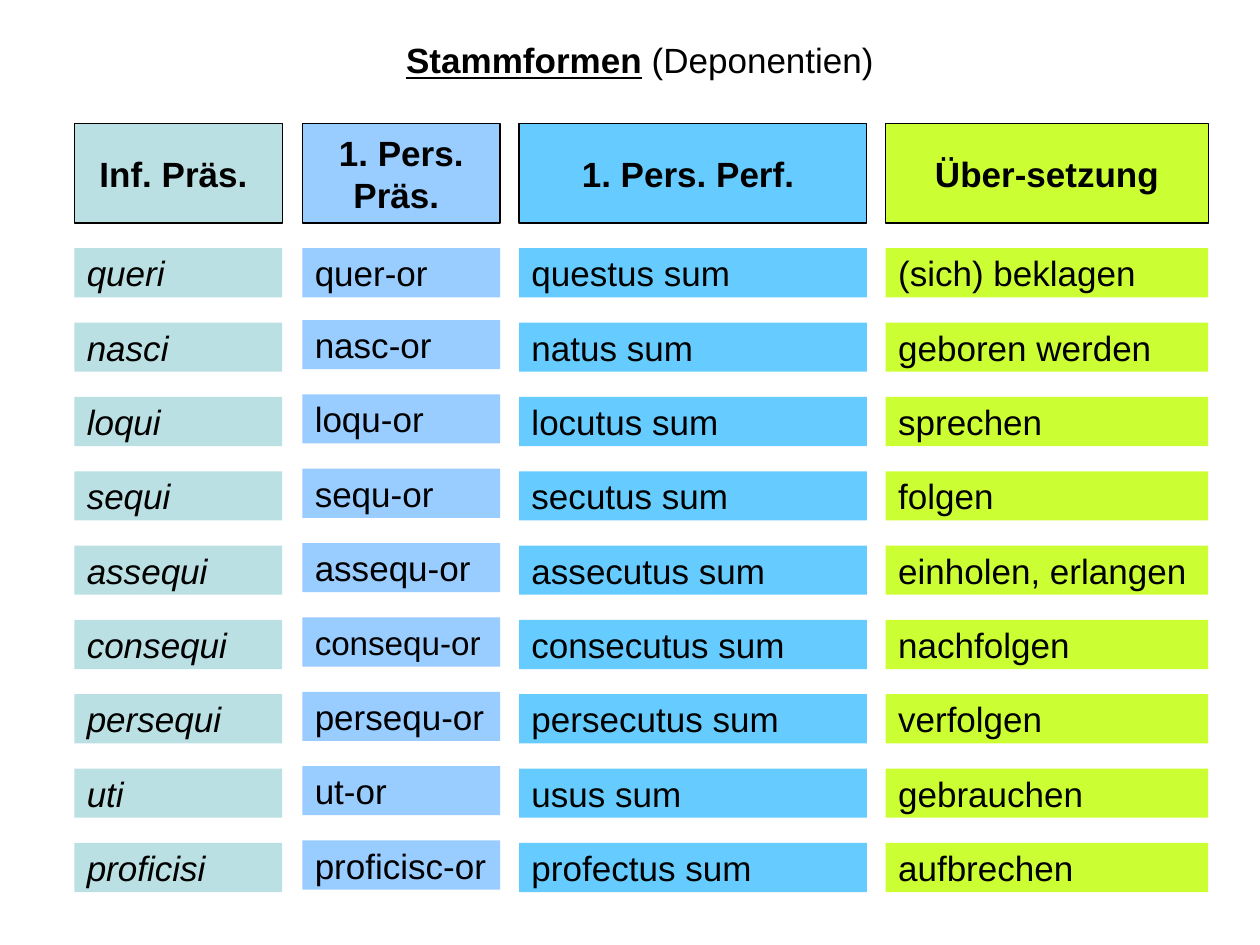
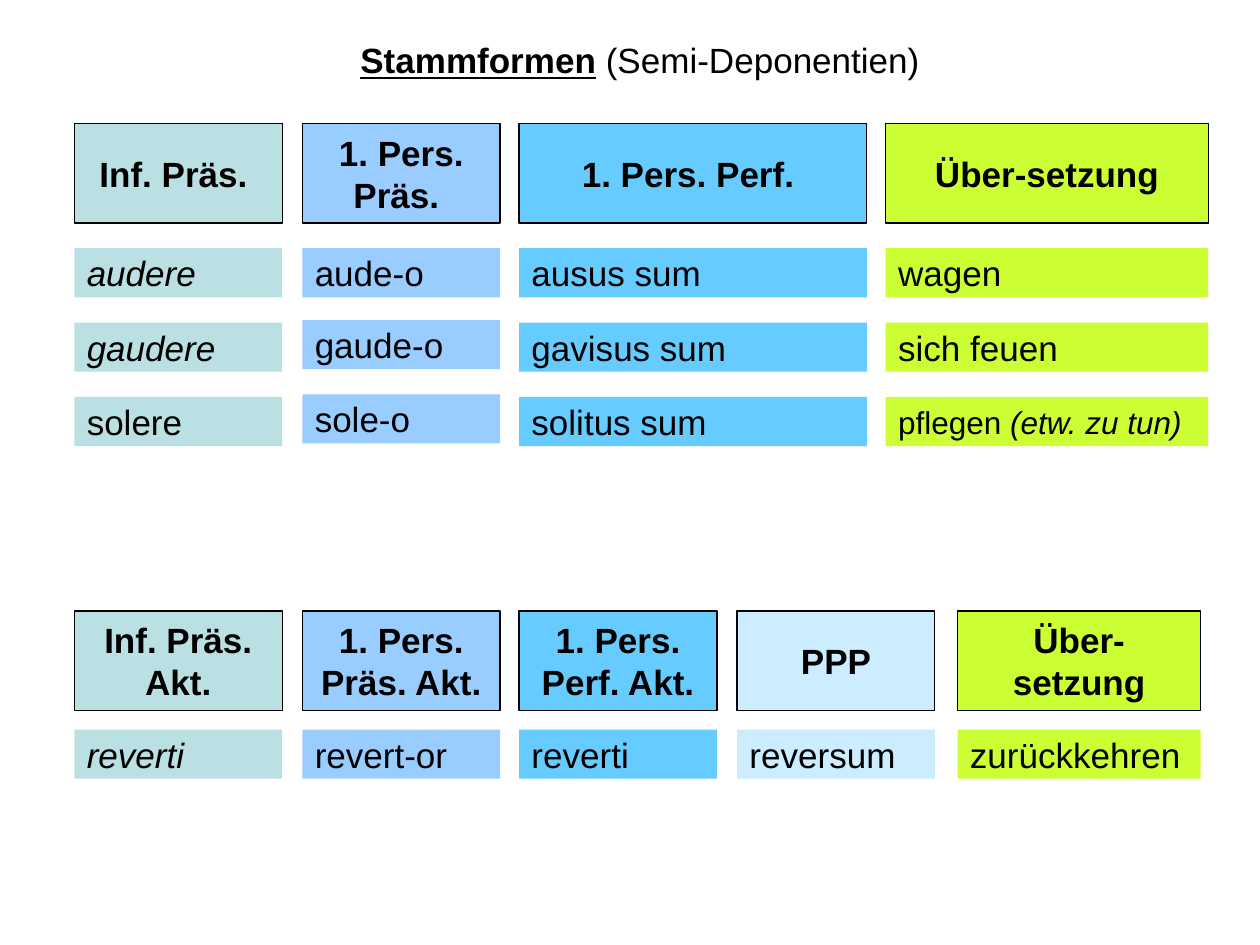
from dataclasses import dataclass

from pptx import Presentation
from pptx.dml.color import RGBColor
from pptx.enum.shapes import MSO_SHAPE
from pptx.enum.text import MSO_ANCHOR, PP_ALIGN
from pptx.util import Inches, Pt

COLORS = {
    "text": "000000",
    "infinitive": "BBE0E3",
    "present": "99CCFF",
    "perfect": "66CCFF",
    "participle": "CCECFF",
    "translation": "CCFF33",
}
FONT = "Arial"
SIZE = 20
HEADER_HEIGHT = 0.79
ROW_HEIGHT = 0.39
ROW_STEP = 0.59


@dataclass
class Column:
    color: str
    left: float
    width: float
    header: str
    italic: bool = False
    lift: float = 0


@dataclass
class Entry:
    text: str
    size: int = SIZE
    upright: bool = False
    note: str = ""


def rgb(name):
    return RGBColor.from_string(COLORS[name])


class Deck:
    def __init__(self):
        self.prs = Presentation()
        self.prs.slide_width = Inches(10)
        self.prs.slide_height = Inches(7.5)
        self.s = None

    def add_slide(self, subject):
        self.s = self.prs.slides.add_slide(self.prs.slide_layouts[6])
        self.title(subject)

    def style(self, p, size=SIZE, bold=False, italic=False):
        p.font.name = FONT
        p.font.size = Pt(size)
        p.font.color.rgb = rgb("text")
        p.font.bold = bold
        p.font.italic = italic

    def title(self, subject):
        sp = self.s.shapes.add_textbox(Inches(0.83), Inches(0.2), Inches(8.5), Inches(0.55))
        tf = sp.text_frame
        tf.word_wrap = True
        tf.vertical_anchor = MSO_ANCHOR.MIDDLE
        p = tf.paragraphs[0]
        p.alignment = PP_ALIGN.CENTER
        self.style(p)
        r = p.add_run()
        r.text = "Stammformen"
        r.font.bold = True
        r.font.underline = True
        p.add_run().text = f" ({subject})"

    def box(self, column, top, height):
        sp = self.s.shapes.add_shape(
            MSO_SHAPE.RECTANGLE,
            Inches(column.left), Inches(top), Inches(column.width), Inches(height),
        )
        sp.shadow.inherit = False
        sp.fill.solid()
        sp.fill.fore_color.rgb = rgb(column.color)
        sp.line.fill.background()
        tf = sp.text_frame
        tf.word_wrap = True
        tf.vertical_anchor = MSO_ANCHOR.MIDDLE
        return sp

    def header(self, column, top):
        sp = self.box(column, top, HEADER_HEIGHT)
        sp.line.color.rgb = rgb("text")
        sp.line.width = Pt(0.75)
        p = sp.text_frame.paragraphs[0]
        p.text = column.header
        p.alignment = PP_ALIGN.CENTER
        self.style(p, bold=True)

    def cell(self, column, top, entry):
        p = self.box(column, top, ROW_HEIGHT).text_frame.paragraphs[0]
        p.alignment = PP_ALIGN.LEFT
        self.style(p, entry.size, italic=column.italic and not entry.upright)
        p.add_run().text = entry.text
        if entry.note:
            r = p.add_run()
            r.text = entry.note
            r.font.italic = True

    def verb_grid(self, columns, rows, header_top, first_row_top):
        for column in columns:
            self.header(column, header_top)
        for i, row in enumerate(rows):
            for column, value in zip(columns, row):
                entry = value if isinstance(value, Entry) else Entry(value)
                lift = column.lift if i else 0
                self.cell(column, first_row_top + i * ROW_STEP - lift, entry)


VERB_COLUMNS = [
    Column("infinitive", 0.59, 1.65, "Inf. Präs. ", italic=True),
    Column("present", 2.4, 1.57, "1. Pers. Präs. ", lift=0.02),
    Column("perfect", 4.12, 2.76, "1. Pers. Perf. "),
    Column("translation", 7.03, 2.56, "Über-setzung"),
]
REVERTI_COLUMNS = [
    Column("infinitive", 0.59, 1.65, "Inf. Präs. Akt.", italic=True),
    Column("present", 2.4, 1.57, "1. Pers. Präs. Akt."),
    Column("perfect", 4.12, 1.57, "1. Pers. Perf. Akt."),
    Column("participle", 5.85, 1.57, "PPP"),
    Column("translation", 7.6, 1.93, "Über-setzung"),
]
DEPONENTS = [
    ("queri", "quer-or", "questus sum", "(sich) beklagen"),
    ("nasci", "nasc-or", "natus sum", "geboren werden"),
    ("loqui", "loqu-or", "locutus sum", "sprechen"),
    ("sequi", "sequ-or", "secutus sum", "folgen"),
    ("assequi", "assequ-or", "assecutus sum", "einholen, erlangen"),
    ("consequi", Entry("consequ-or", size=19), "consecutus sum", "nachfolgen"),
    ("persequi", "persequ-or", "persecutus sum", "verfolgen"),
    ("uti", "ut-or", "usus sum", "gebrauchen"),
    ("proficisi", "proficisc-or", "profectus sum", "aufbrechen"),
]
SEMI_DEPONENTS = [
    ("audere", "aude-o", "ausus sum", "wagen"),
    ("gaudere", "gaude-o", "gavisus sum", "sich feuen"),
    (Entry("solere", upright=True), "sole-o", "solitus sum",
     Entry("pflegen ", size=18, note="(etw. zu tun)")),
]
REVERTI = [("reverti", "revert-or", "reverti", "reversum", "zurückkehren")]


def main():
    deck = Deck()
    deck.add_slide("Deponentien")
    deck.verb_grid(VERB_COLUMNS, DEPONENTS, 0.98, 1.97)
    deck.add_slide("Semi-Deponentien")
    deck.verb_grid(VERB_COLUMNS, SEMI_DEPONENTS, 0.98, 1.97)
    deck.verb_grid(REVERTI_COLUMNS, REVERTI, 4.85, 5.79)
    deck.prs.save("out.pptx")


if __name__ == "__main__":
    main()
